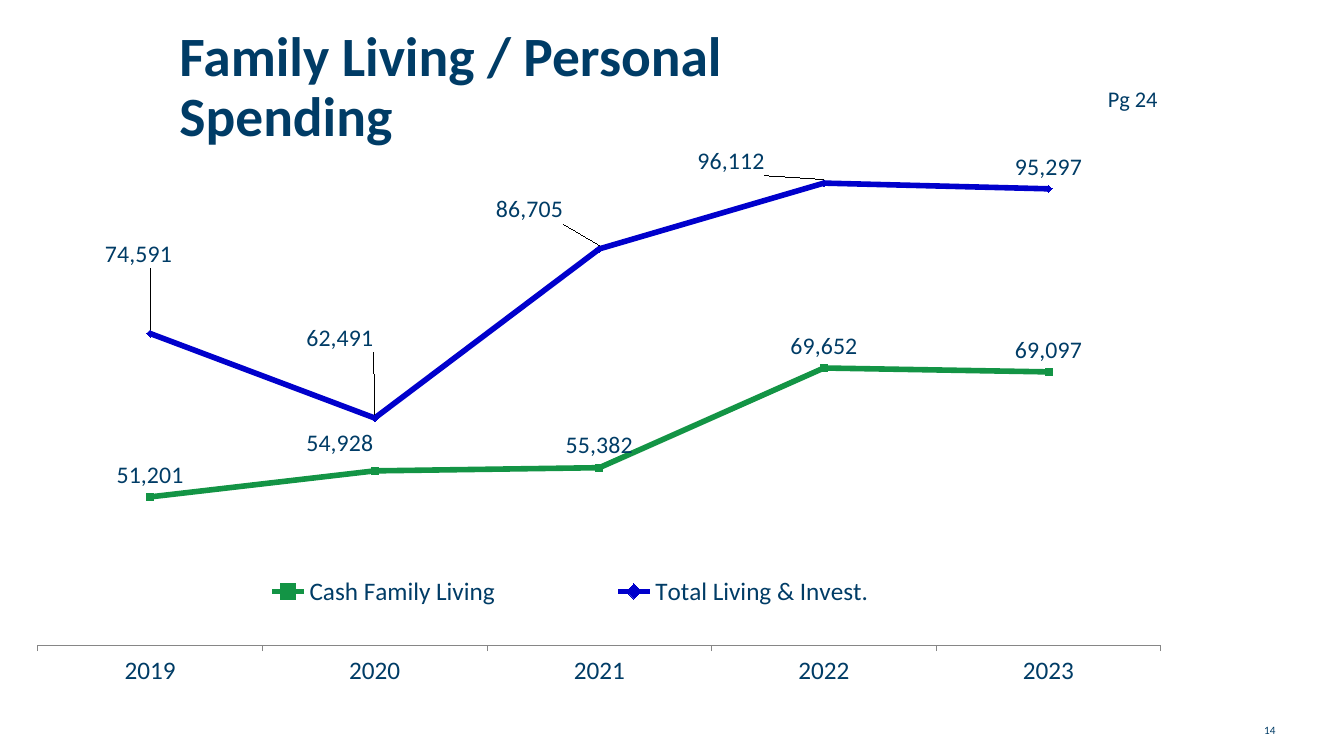
from lxml.etree import SubElement
from pptx import Presentation
from pptx.chart.data import CategoryChartData
from pptx.dml.color import RGBColor
from pptx.enum.chart import (XL_CHART_TYPE, XL_LABEL_POSITION, XL_LEGEND_POSITION,
                             XL_MARKER_STYLE, XL_TICK_LABEL_POSITION, XL_TICK_MARK)
from pptx.enum.text import MSO_ANCHOR, PP_ALIGN
from pptx.oxml import parse_xml
from pptx.oxml.ns import nsdecls, qn
from pptx.util import Inches, Pt

NAVY = "003C66"
AXIS_GRAY = "868686"
TITLE = "Family Living / Personal Spending"
TITLE_BOX = (1.68, 0.5, 7.33, 0.75)
NOTES = [
    {"text": "14", "box": (12.44, 7.13, 0.34, 0.24), "size": 8, "align": PP_ALIGN.LEFT, "wrap": False},
    {"text": "Pg 24", "box": (10.41, 0.8, 1.17, 0.37), "size": 16, "align": PP_ALIGN.RIGHT, "wrap": True},
]
CHART_BOX = (0.18, 1.37, 11.53, 5.73)
PLOT_AREA = (0.017, 0.031, 0.966, 0.847)
LEGEND_AREA = (0.12, 0.75, 0.71, 0.07)
YEARS = ["2019", "2020", "2021", "2022", "2023"]
SERIES = [
    {"name": "Cash Family Living", "values": (51201, 54928, 55382, 69652, 69097),
     "color": "139445", "marker": XL_MARKER_STYLE.SQUARE,
     "label_shifts": {1: (-0.03, -0.01)}},
    {"name": "Total Living & Invest.", "values": (74591, 62491, 86705, 96112, 95297),
     "color": "0000CC", "marker": XL_MARKER_STYLE.DIAMOND,
     "label_shifts": {0: (-0.01, -0.1), 1: (-0.03, -0.1), 2: (-0.06, -0.03), 3: (-0.08, 0)}},
]
VALUE_AXIS = {"minimum_scale": 30000, "maximum_scale": 100000, "major_unit": 90000,
              "has_major_gridlines": True, "visible": False}


def color(value):
    return RGBColor.from_string(value)


def inches(box):
    return [Inches(length) for length in box]


def set_attributes(target, values):
    for name, value in values.items():
        setattr(target, name, value)


def set_font(font, size, bold=False):
    set_attributes(font, {"name": "Calibri", "size": Pt(size), "bold": bold})
    font.color.rgb = color(NAVY)


def make_layout(fractions, inner=False, edges=True):
    layout = parse_xml(f"<c:layout {nsdecls('c')}/>")
    manual = SubElement(layout, qn("c:manualLayout"))
    settings = [("layoutTarget", "inner")] if inner else []
    if edges:
        settings += [("xMode", "edge"), ("yMode", "edge")]
    settings += zip("xywh", fractions)
    for tag, value in settings:
        SubElement(manual, qn(f"c:{tag}")).set("val", str(value))
    return layout


def replace_layout(parent, layout, position):
    for old in parent.findall(qn("c:layout")):
        parent.remove(old)
    parent.insert(position, layout)


def add_title(slide):
    title = slide.shapes.title
    set_attributes(title, dict(zip(("left", "top", "width", "height"), inches(TITLE_BOX))))
    title.text_frame.text = TITLE
    set_attributes(title.text_frame, {"vertical_anchor": MSO_ANCHOR.MIDDLE, "word_wrap": True})
    paragraph = title.text_frame.paragraphs[0]
    set_attributes(paragraph, {"alignment": PP_ALIGN.LEFT, "line_spacing": 0.9})
    set_font(paragraph.runs[0].font, 39.6, True)


def add_note(slide, note):
    frame = slide.shapes.add_textbox(*inches(note["box"])).text_frame
    frame.word_wrap = note["wrap"]
    paragraph = frame.paragraphs[0]
    paragraph.text = note["text"]
    paragraph.alignment = note["align"]
    set_font(paragraph.runs[0].font, note["size"])


def format_series(series, content):
    series.smooth = False
    series.format.line.width = Pt(4)
    series.format.line.color.rgb = color(content["color"])
    set_attributes(series.marker, {"style": content["marker"], "size": 5})
    series.marker.format.fill.solid()
    series.marker.format.fill.fore_color.rgb = color(content["color"])
    series.marker.format.line.color.rgb = color(content["color"])
    labels = series.data_labels
    set_attributes(labels, {"show_value": True, "position": XL_LABEL_POSITION.ABOVE,
                            "number_format": "#,##0", "number_format_is_linked": False})
    set_font(labels.font, 17)
    for index, shift in content["label_shifts"].items():
        label = series.points[index].data_label
        label.position = XL_LABEL_POSITION.ABOVE
        set_font(label.font, 17)
        element = labels._element.findall(qn("c:dLbl"))[-1]
        replace_layout(element, make_layout(shift, edges=False), 1)


def add_spending_chart(slide):
    data = CategoryChartData(number_format="#,##0")
    data.categories = YEARS
    for content in SERIES:
        data.add_series(content["name"], content["values"])
    chart = slide.shapes.add_chart(XL_CHART_TYPE.LINE_MARKERS, *inches(CHART_BOX), data).chart
    chart.has_title = False
    set_font(chart.font, 18)
    chart.plots[0].vary_by_categories = False
    for series, content in zip(chart.plots[0].series, SERIES):
        format_series(series, content)

    set_attributes(chart.value_axis, VALUE_AXIS)
    chart.value_axis.major_gridlines.format.line.color.rgb = color(AXIS_GRAY)
    set_attributes(chart.category_axis, {"major_tick_mark": XL_TICK_MARK.OUTSIDE,
                                         "minor_tick_mark": XL_TICK_MARK.NONE,
                                         "tick_label_position": XL_TICK_LABEL_POSITION.LOW,
                                         "has_major_gridlines": False})
    chart.category_axis.format.line.color.rgb = color(AXIS_GRAY)
    set_font(chart.category_axis.tick_labels.font, 18)

    chart.has_legend = True
    set_attributes(chart.legend, {"position": XL_LEGEND_POSITION.RIGHT, "include_in_layout": False})
    set_font(chart.legend.font, 18)
    replace_layout(chart.legend._element, make_layout(LEGEND_AREA), 1)
    plot_area = chart._chartSpace.find(qn("c:chart")).find(qn("c:plotArea"))
    replace_layout(plot_area, make_layout(PLOT_AREA, inner=True), 0)


def main():
    presentation = Presentation()
    set_attributes(presentation, {"slide_width": Inches(13.33), "slide_height": Inches(7.5)})
    slide = presentation.slides.add_slide(presentation.slide_layouts[5])
    add_title(slide)
    for note in NOTES:
        add_note(slide, note)
    add_spending_chart(slide)
    presentation.save("out.pptx")


if __name__ == "__main__":
    main()
